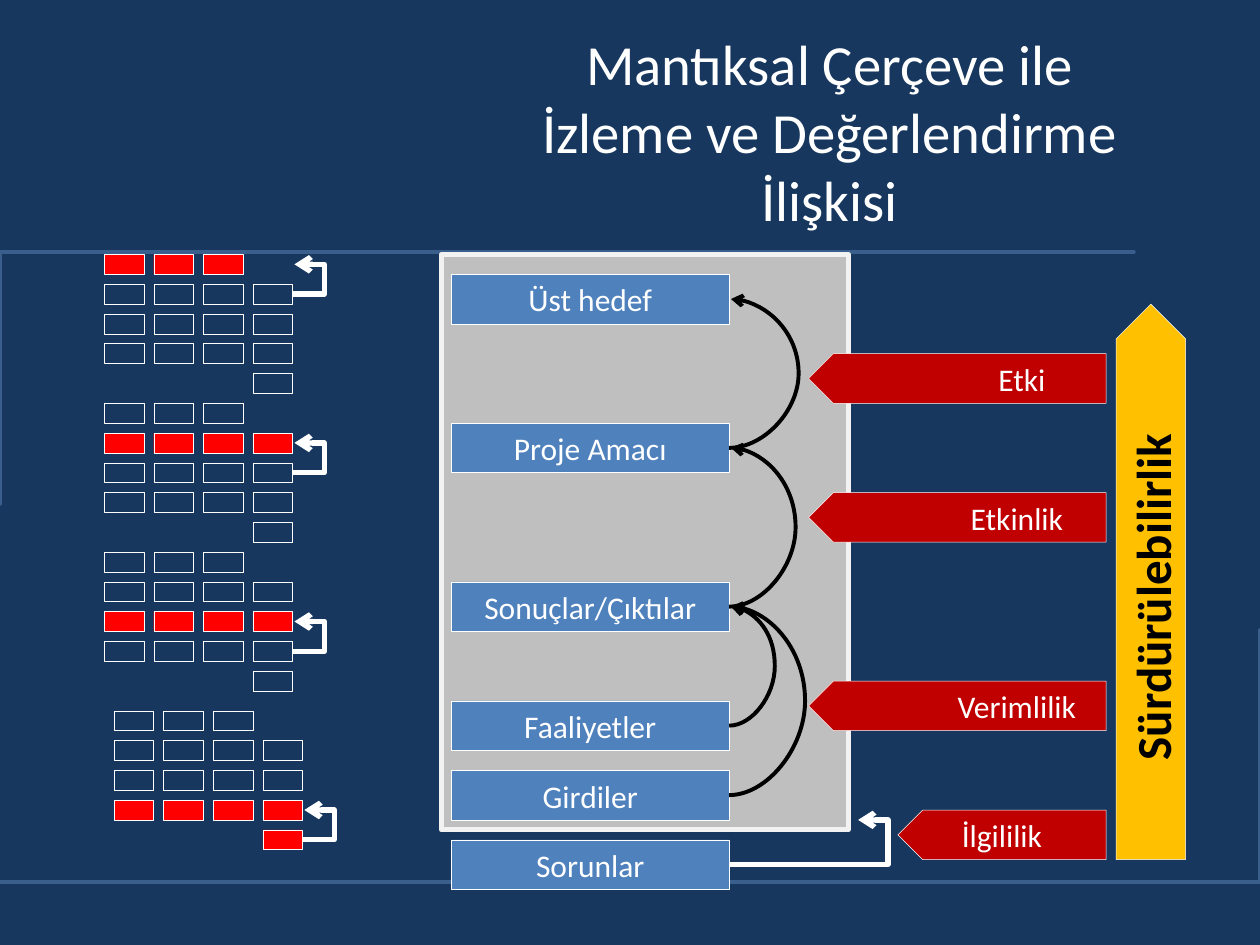
"""Logical framework slide: project levels linked to evaluation criteria."""
from typing import NamedTuple

from lxml.etree import SubElement
from pptx import Presentation
from pptx.dml.color import RGBColor
from pptx.enum.shapes import MSO_CONNECTOR as Conn, MSO_SHAPE as Kind
from pptx.enum.text import MSO_ANCHOR as Anchor, PP_ALIGN as Align
from pptx.oxml.ns import qn
from pptx.util import Inches, Mm, Pt

HUES = {
    "navy": "17375E", "white": "FFFFFF", "edge": "3A5F8C", "grey": "BFBFBF",
    "pale": "F2F2F2", "red": "FF0000", "blue": "4F81BD", "wine": "C00000",
    "gold": "FFC000", "black": "000000",
}
UNIT, LEFT, TOP = 2, 0.5, 25.65
HIGH = 5


class Box(NamedTuple):
    col: float
    row: float
    wide: float
    high: float


class Block(NamedTuple):
    col: int
    row: int
    hot: tuple[int, ...]


class Level(NamedTuple):
    name: str
    row: int

    @property
    def mid(self) -> float:
        return self.row + HIGH / 2


class Mark(NamedTuple):
    name: str
    col: int
    row: int
    text: int


class Link(NamedTuple):
    low: int
    high: int
    reach: float


BLOCKS = [Block(10, 0, (0,)), Block(10, 15, (1,)), Block(10, 30, (2,)),
          Block(11, 46, (3, 4))]
LEVELS = [Level("Üst hedef", 2), Level("Proje Amacı", 17),
          Level("Sonuçlar/Çıktılar", 33), Level("Faaliyetler", 45),
          Level("Girdiler", 52), Level("Sorunlar", 59)]
MARKS = [Mark("Etkinlik", 81, 24, 93), Mark("Etki", 81, 10, 94),
         Mark("Verimlilik", 81, 43, 93), Mark("İlgililik", 90, 56, 90)]
LINKS = [Link(4, 2, 7.65), Link(3, 2, 4.6), Link(2, 1, 6.7), Link(1, 0, 7)]
FRAMES = [
    [(0.2, 1.7), (9.49, 1.94), (0.44, 1.97), (0.43, 3.75)],
    [(9.8, 7.37), (0.35, 7.14), (9.54, 7.11), (9.57, 5.4)],
]


def hue(name: str) -> RGBColor:
    return RGBColor.from_string(HUES[name])


def spot(col: float, row: float) -> tuple[int, int]:
    return Mm((col + LEFT) * UNIT), Mm((row + TOP) * UNIT)


def place(box: Box) -> tuple[int, int, int, int]:
    return *spot(box.col, box.row), Mm(box.wide * UNIT), Mm(box.high * UNIT)


def style(shape, fill: str | None, line: str, width: float) -> None:
    shape.shadow.inherit = False
    if fill:
        shape.fill.solid()
        shape.fill.fore_color.rgb = hue(fill)
    else:
        shape.fill.background()
    shape.line.color.rgb = hue(line)
    shape.line.width = Pt(width)


def draw(slide, kind: Kind, box: Box, fill: str | None, turn: int = 0,
         line: str = "white", width: float = 0.25):
    shape = slide.shapes.add_shape(kind, *place(box))
    shape.rotation = turn
    style(shape, fill, line, width)
    return shape


def write(shape, text: str, size: float = 18, color: str = "white",
          bold: bool = False, anchor: Anchor = Anchor.TOP) -> None:
    frame = shape.text_frame
    frame.word_wrap = True
    frame.vertical_anchor = anchor
    par = frame.paragraphs[0]
    par.text = text
    par.alignment = Align.CENTER
    font = par.font
    font.name, font.size, font.bold = "Calibri", Pt(size), bold
    font.color.rgb = hue(color)


def label(slide, box: Box):
    return slide.shapes.add_textbox(*place(box))


def link(slide, kind: Conn, start: tuple[float, float],
         end: tuple[float, float], reach: float, color: str, width: float) -> None:
    line = slide.shapes.add_connector(kind, *spot(*start), *spot(*end))
    line.line.color.rgb = hue(color)
    line.line.width = Pt(width)
    props = line._element.spPr
    bend = round(reach / (end[0] - start[0]) * 100000)
    guides = props.find(qn("a:prstGeom")).get_or_add_avLst()
    SubElement(guides, qn("a:gd"), name="adj1", fmla=f"val {bend}")
    SubElement(props.find(qn("a:ln")), qn("a:tailEnd"), type="arrow")
    SubElement(props, qn("a:effectLst"))


def corner(slide, points: list[tuple[float, float]]) -> None:
    path = slide.shapes.build_freeform(*points[0], scale=Inches(1))
    path.add_line_segments(points[1:], close=True)
    style(path.convert_to_shape(), "white", "edge", 2)


def matrix(slide, block: Block) -> None:
    for row in range(5):
        cols = {0: range(3), 4: range(3, 4)}.get(row, range(4))
        for col in cols:
            cell = Box(block.col + 5 * col, block.row + 3 * row, 4, 2)
            draw(slide, Kind.RECTANGLE, cell, "red" if row in block.hot else None)


def hook(slide, block: Block) -> None:
    side, top = block.col + 19, block.row + 3 * block.hot[0] + 1
    link(slide, Conn.ELBOW, (side, top + 3), (side + 0.18, top), 3.2, "white", 3)


def main() -> None:
    deck = Presentation()
    deck.slide_width, deck.slide_height = Inches(10), Inches(7.5)
    slide = deck.slides.add_slide(deck.slide_layouts[6])
    back = slide.background.fill
    back.solid()
    back.fore_color.rgb = hue("navy")

    for points in FRAMES:
        corner(slide, points)
    draw(slide, Kind.RECTANGLE, Box(44, 0, 41, 58), "grey", line="pale", width=3)
    title = label(slide, Box(46, -21.85, 74.2, 18.8))
    write(title, "Mantıksal Çerçeve ile\vİzleme ve Değerlendirme İlişkisi",
          32.4, anchor=Anchor.MIDDLE)

    for block in BLOCKS:
        matrix(slide, block)
    for level in LEVELS:
        bar = draw(slide, Kind.RECTANGLE, Box(45, level.row, 28, HIGH), "blue")
        write(bar, level.name)
    for mark in MARKS:
        draw(slide, Kind.PENTAGON, Box(mark.col, mark.row, 111 - mark.col, HIGH),
             "wine", 180)
        write(label(slide, Box(mark.text, mark.row, 111 - mark.text, HIGH)),
              mark.name)
    draw(slide, Kind.PENTAGON, Box(87.5, 29.5, 56, 7), "gold", 270)
    motto = label(slide, Box(91.1, 30.9, 49, 7.25))
    motto.rotation = 270
    write(motto, "Sürdürülebilirlik", 28, "black", True)

    for block in BLOCKS:
        hook(slide, block)
    link(slide, Conn.ELBOW, (73, LEVELS[-1].mid), (86, 57), 16, "white", 3)
    for low, high, reach in LINKS:
        link(slide, Conn.CURVE, (73, LEVELS[low].mid), (73.18, LEVELS[high].mid),
             reach, "black", 2.25)
    deck.save("out.pptx")


if __name__ == "__main__":
    main()
